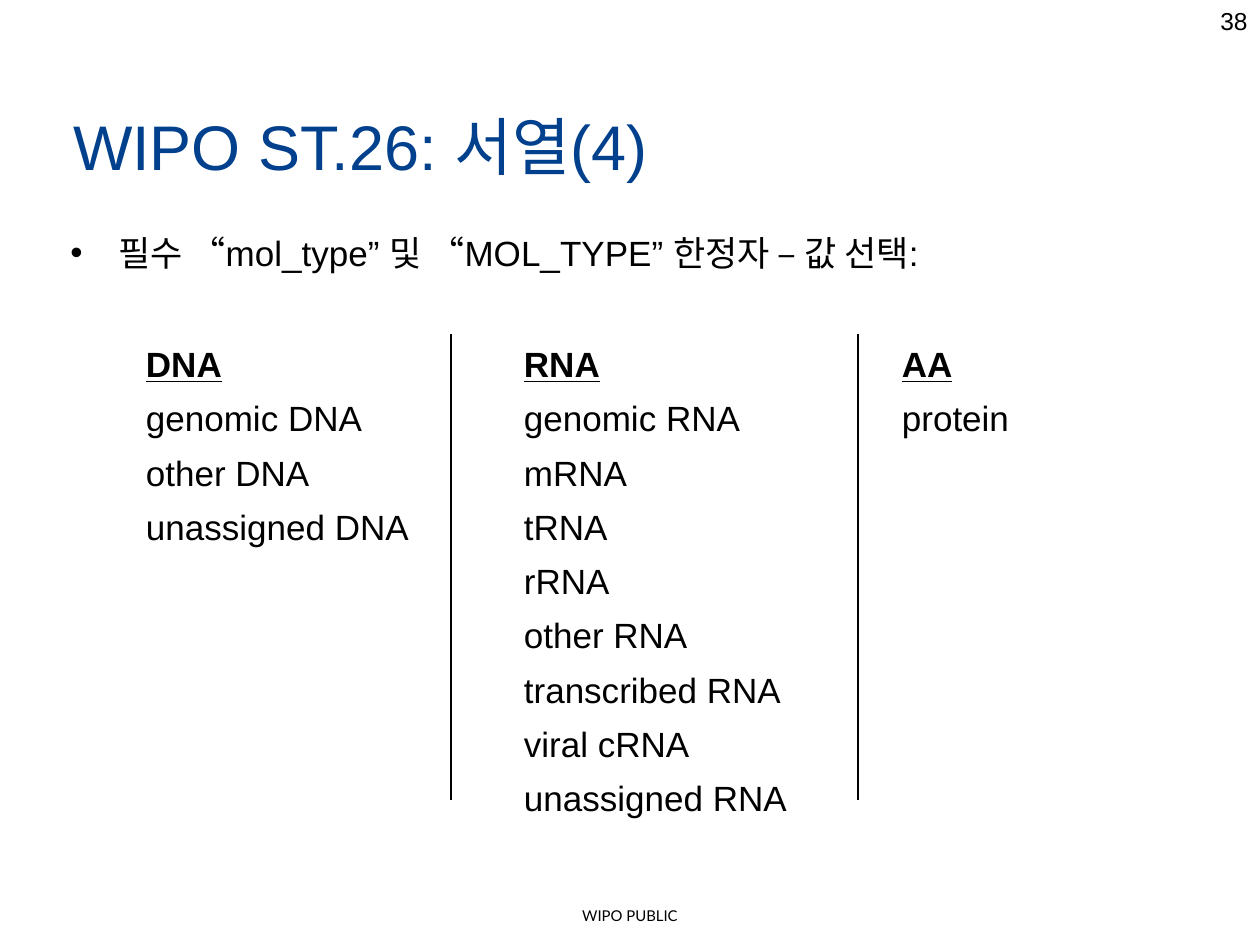
import pptx
import pptx.util
import pptx.dml.color
import pptx.enum.shapes
import pptx.enum.text
import pptx.oxml.ns
from lxml import etree

Inches = pptx.util.Inches
Pt = pptx.util.Pt
ALIGN = pptx.enum.text.PP_ALIGN

# Content
TITLE = "WIPO ST.26: 서열(4)"
PAGE_NUMBER = "38"
FOOTER = "WIPO PUBLIC"
LEAD = "필수 “mol_type” 및 “MOL_TYPE” 한정자 – 값 선택:"
HEADINGS = ["DNA", "RNA", "AA"]
ROWS = [
    ["genomic DNA", "genomic RNA", "protein"],
    ["other DNA", "mRNA"],
    ["unassigned DNA", "tRNA"],
    ["", "rRNA"],
    ["", "other RNA"],
    ["", "transcribed RNA"],
    ["", "viral cRNA"],
    ["", "unassigned RNA"],
]
COLORS = {"title": "00408C", "text": "000000"}
COLUMN_STEP = 3
DIVIDERS = [3.58, 6.81]
DIVIDER_TOP, DIVIDER_BOTTOM = 2.65, 6.35


def format_span(span, size, color="text", name="Arial"):
    span.font.size = Pt(size)
    span.font.name = name
    span.font.color.rgb = pptx.dml.color.RGBColor.from_string(COLORS[color])


def add_box(page, left, top, width, height):
    box = page.shapes.add_textbox(Inches(left), Inches(top), Inches(width), Inches(height))
    box.text_frame.word_wrap = True
    return box.text_frame


def add_label(page, place, text, size, align, name="Arial"):
    para = add_box(page, *place).paragraphs[0]
    para.text = text
    para.alignment = align
    format_span(para.runs[0], size, name=name)
    return para


def add_child(parent, tag, **attributes):
    return etree.SubElement(parent, pptx.oxml.ns.qn(tag), attributes)


def main():
    deck = pptx.Presentation()
    deck.slide_width, deck.slide_height = Inches(10), Inches(7.5)
    page = deck.slides.add_slide(deck.slide_layouts[5])

    # Title
    title = page.shapes.title
    title.left, title.top = Inches(0.48), Inches(0.8)
    title.width, title.height = Inches(9), Inches(1.25)
    title.text_frame.text = TITLE
    title.text_frame.vertical_anchor = pptx.enum.text.MSO_ANCHOR.TOP
    title.text_frame.paragraphs[0].alignment = ALIGN.LEFT
    format_span(title.text_frame.paragraphs[0].runs[0], 36, "title")

    # Footer and page number
    add_label(page, (0, 7.15, 10, 0.24), FOOTER, 8.5, ALIGN.CENTER, "Lato")
    add_label(page, (7.67, 0, 2.33, 0.52), PAGE_NUMBER, 14, ALIGN.RIGHT)

    # Bulleted lead line
    lead = add_label(page, (0.46, 1.79, 6.88, 0.44), LEAD, 20, ALIGN.LEFT)
    properties = lead._p.get_or_add_pPr()
    properties.set("marL", str(Inches(0.38)))
    properties.set("indent", str(-Inches(0.38)))
    add_child(properties, "a:buFont", typeface="Arial")
    add_child(properties, "a:buChar", char="•")

    # Columns of values, set on tab stops
    frame = add_box(page, 1.06, 2.67, 7.24, 4.41)
    for index, row in enumerate([HEADINGS] + ROWS):
        para = frame.paragraphs[0] if index == 0 else frame.add_paragraph()
        if index:
            para.space_before = Pt(7)
        stops = add_child(para._p.get_or_add_pPr(), "a:tabLst")
        for column in range(1, len(HEADINGS)):
            add_child(stops, "a:tab", pos=str(Inches(column * COLUMN_STEP)), algn="l")
        for column, value in enumerate(row):
            if column:
                gap = para.add_run()
                gap.text = "\t"
                format_span(gap, 20)
            if value:
                span = para.add_run()
                span.text = value
                format_span(span, 20)
                span.font.bold = span.font.underline = index == 0

    # Column dividers
    for x in DIVIDERS:
        line = page.shapes.add_connector(
            pptx.enum.shapes.MSO_CONNECTOR.STRAIGHT,
            Inches(x), Inches(DIVIDER_TOP), Inches(x), Inches(DIVIDER_BOTTOM))
        line.line.color.rgb = pptx.dml.color.RGBColor.from_string(COLORS["text"])
        line.line.width = Pt(0.75)
        add_child(line._element.spPr, "a:effectLst")

    deck.save("out.pptx")


if __name__ == "__main__":
    main()
